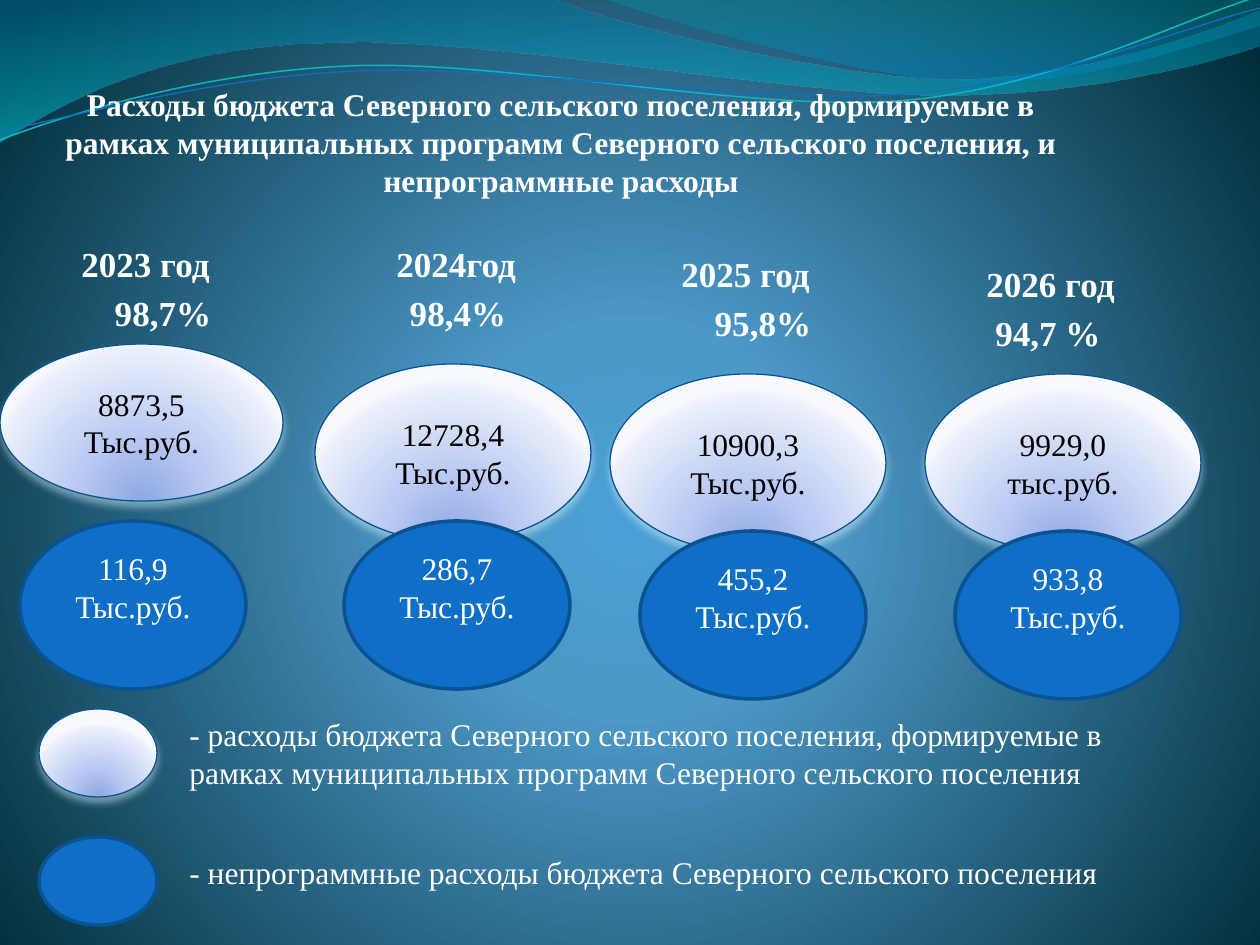
import math

from lxml import etree
from pptx import Presentation
from pptx import util as u
from pptx.dml.color import RGBColor
from pptx.enum import shapes, text
from pptx.oxml import ns

PX = 914400 / 126
FONT = "Times New Roman"
WHITE = RGBColor(0xFF, 0xFF, 0xFF)
BLACK = RGBColor(0, 0, 0)
BLUE = RGBColor(0x0F, 0x6F, 0xC6)
BLUE_EDGE = RGBColor(0x0B, 0x52, 0x92)
PALE_EDGE = RGBColor(0x09, 0x52, 0x95)
TEAL = RGBColor(0x0A, 0xB8, 0xBF)
GLOW = RGBColor(0xDB, 0xF5, 0xF9)


def rgb(code):
    return RGBColor.from_string(code)


BACKDROP = [(0, rgb("4AA0D6"), 100), (25, rgb("4C98C7"), 100), (100, rgb("002C38"), 100)]
PALE = [(0, rgb("8DA8E3"), 100), (43, rgb("BBCBF3"), 100),
        (93, rgb("EAEFFB"), 100), (100, rgb("F7F9FF"), 100)]

BANDS = [
    ((0, 0),
     [[(554, -1)], [(600, 21), (837, 79), (955, 79)], [(1075, 79), (1207, 33), (1260, 11)],
      [(1261, 45)], [(1239, 55), (1096, 96), (940, 95)], [(784, 95), (481, 35), (324, 43)],
      [(163, 45), (58, 105), (-1, 142)], [(0, 0)]],
     [(0, rgb("0074A1"), 45), (100, rgb("00C6CF"), 55)]),
    ((604, -1),
     [[(641, 14), (859, 78), (969, 82)], [(1078, 87), (1211, 40), (1260, 26)],
      [(1260, 0)], [(604, -1)]],
     [(0, rgb("00A1A9"), 30), (80, rgb("008BBF"), 45)]),
]
STRANDS = [
    ((0, 140),
     [[(60, 117), (199, 72), (349, 66)], [(498, 59), (747, 112), (898, 101)],
      [(1050, 89), (1182, 19), (1257, -3)]], TEAL, 0.85),
    ((0, 131),
     [[(59, 121), (207, 77), (357, 71)], [(508, 64), (752, 106), (903, 94)],
      [(1053, 84), (1186, 26), (1260, 8)]], BLUE, 0.75),
]
STRAND_CENTRE = (629, 72)
STRAND_TILT = -2.7

TITLE = ("Расходы бюджета Северного сельского поселения, формируемые в рамках "
         "муниципальных программ Северного сельского поселения, и непрограммные расходы")
YEARS = [
    ("2023 год", (69, 236), "98,7%", (70, 285),
     ("8873,5", "Тыс.руб."), (0, 344, 283, 157), "116,9", (20, 521)),
    ("2024год", (384, 236), "98,4%", (365, 285),
     ("12728,4", "Тыс.руб."), (315, 364, 276, 178), "286,7", (344, 521)),
    ("2025 год", (669, 246), "95,8%", (670, 295),
     ("10900,3", "Тыс.руб."), (610, 374, 276, 178), "455,2", (640, 531)),
    ("2026 год", (974, 256), "94,7 %", (955, 305),
     ("9929,0", "тыс.руб."), (925, 374, 276, 178), "933,8", (955, 531)),
]
LABEL_SIZE = (186, 55)
BLUE_SIZE = (226, 168)
KEY_SIZE = (118, 88)


def px(*lengths):
    return [u.Emu(round(length * PX)) for length in lengths]


def add_color(parent, color, alpha):
    node = etree.SubElement(parent, ns.qn("a:srgbClr"), val=str(color))
    if alpha < 100:
        etree.SubElement(node, ns.qn("a:alpha"), val=str(alpha * 1000))


def set_gradient(fill, owner, stops, focus=None):
    fill.solid()
    solid = owner.find(ns.qn("a:solidFill"))
    gradient = etree.Element(ns.qn("a:gradFill"), rotWithShape="1")
    stop_list = etree.SubElement(gradient, ns.qn("a:gsLst"))
    for position, color, alpha in stops:
        stop = etree.SubElement(stop_list, ns.qn("a:gs"), pos=str(position * 1000))
        add_color(stop, color, alpha)
    if focus:
        circle = etree.SubElement(gradient, ns.qn("a:path"), {"path": "circle"})
        etree.SubElement(circle, ns.qn("a:fillToRect"),
                         {side: str(inset * 1000) for side, inset in zip("ltrb", focus)})
    else:
        etree.SubElement(gradient, ns.qn("a:lin"), ang="5400000", scaled="1")
    owner.replace(solid, gradient)


def turn(point, degrees):
    angle = math.radians(degrees)
    across, down = (value - middle for value, middle in zip(point, STRAND_CENTRE))
    return (STRAND_CENTRE[0] + across * math.cos(angle) - down * math.sin(angle),
            STRAND_CENTRE[1] + across * math.sin(angle) + down * math.cos(angle))


def add_wave(slide, start, segments, closed):
    builder = slide.shapes.build_freeform(*px(*start))
    builder.add_line_segments([px(*segment[-1]) for segment in segments], close=closed)
    wave = builder.convert_to_shape()
    wave.shadow.inherit = False
    sides = wave._element.spPr.findall(".//" + ns.qn("a:lnTo"))
    for side, segment in zip(sides, segments):
        if len(segment) == 3:
            side.tag = ns.qn("a:cubicBezTo")
            for index, control in enumerate(segment[:2]):
                x, y = px(*control)
                side.insert(index, etree.Element(ns.qn("a:pt"), x=str(x - wave.left),
                                                 y=str(y - wave.top)))
    return wave


def add_waves(slide):
    for start, segments, stops in BANDS:
        band = add_wave(slide, start, segments, True)
        set_gradient(band.fill, band._element.spPr, stops)
        band.line.fill.background()
    for start, segments, color, weight in STRANDS:
        level = [[turn(point, -STRAND_TILT) for point in segment] for segment in segments]
        strand = add_wave(slide, turn(start, -STRAND_TILT), level, False)
        strand.rotation = STRAND_TILT
        strand.fill.background()
        strand.line.color.rgb = color
        strand.line.width = u.Pt(weight)


def write(frame, lines, size, color=WHITE, bold=False, align=text.PP_ALIGN.CENTER):
    frame.word_wrap = True
    for index, line in enumerate(lines):
        paragraph = frame.add_paragraph() if index else frame.paragraphs[0]
        paragraph.alignment = align
        run = paragraph.add_run()
        run.text = line
        run.font.name = FONT
        run.font.size = u.Pt(size)
        run.font.bold = bold
        run.font.color.rgb = color


def add_title(slide):
    title = slide.shapes.title
    title.left, title.top, title.width, title.height = px(20, 79, 1082, 127)
    title.text_frame.auto_size = text.MSO_AUTO_SIZE.NONE
    title.text_frame.vertical_anchor = text.MSO_ANCHOR.TOP
    write(title.text_frame, [TITLE], 18, bold=True)
    slide.shapes._spTree.append(title._element)


def add_label(slide, box, caption, size, bold=False, align=text.PP_ALIGN.LEFT):
    label = slide.shapes.add_textbox(*px(*box))
    write(label.text_frame, [caption], size, bold=bold, align=align)


def add_oval(slide, box, edge, weight):
    oval = slide.shapes.add_shape(shapes.MSO_SHAPE.OVAL, *px(*box))
    oval.shadow.inherit = False
    oval.line.color.rgb = edge
    oval.line.width = u.Pt(weight)
    oval.text_frame.vertical_anchor = text.MSO_ANCHOR.MIDDLE
    return oval


def add_program_oval(slide, box, lines=()):
    oval = add_oval(slide, box, PALE_EDGE, 0.75)
    properties = oval._element.spPr
    set_gradient(oval.fill, properties, PALE, (50, 130, 50, -30))
    shadow = etree.SubElement(properties.find(ns.qn("a:effectLst")), ns.qn("a:outerShdw"),
                              blurRad=str(u.Pt(4.5)), dist=str(u.Pt(3)),
                              dir="5400000", rotWithShape="0")
    add_color(shadow, GLOW, 48)
    write(oval.text_frame, lines, 18, BLACK)


def add_other_oval(slide, box, lines=()):
    oval = add_oval(slide, box, BLUE_EDGE, 2)
    oval.fill.solid()
    oval.fill.fore_color.rgb = BLUE
    oval.text_frame.margin_bottom = px(43)[0]
    write(oval.text_frame, lines, 18)


def add_year(slide, year, year_at, share, share_at, program, program_box, other, other_at):
    add_label(slide, year_at + LABEL_SIZE, year, 20, True)
    add_label(slide, share_at + LABEL_SIZE, share, 20, True, text.PP_ALIGN.CENTER)
    add_program_oval(slide, program_box, program)
    add_other_oval(slide, other_at + BLUE_SIZE, (other, "Тыс.руб."))


def add_legend(slide):
    add_program_oval(slide, (39, 709) + KEY_SIZE)
    add_label(slide, (177, 709, 1023, 89),
              "- расходы бюджета Северного сельского поселения, формируемые в рамках "
              "муниципальных программ Северного сельского поселения", 18)
    add_other_oval(slide, (39, 837) + KEY_SIZE)
    add_label(slide, (177, 847, 1023, 50),
              "- непрограммные расходы бюджета Северного сельского поселения", 18)


def main():
    deck = Presentation()
    deck.slide_width, deck.slide_height = px(1260, 945)
    slide = deck.slides.add_slide(deck.slide_layouts[5])
    backdrop = slide.background.fill
    set_gradient(backdrop, slide._element.find(".//" + ns.qn("p:bgPr")),
                 BACKDROP, (10, 110, 10, 100))
    add_waves(slide)
    add_title(slide)
    for year in YEARS:
        add_year(slide, *year)
    add_legend(slide)
    deck.save("out.pptx")


if __name__ == "__main__":
    main()
